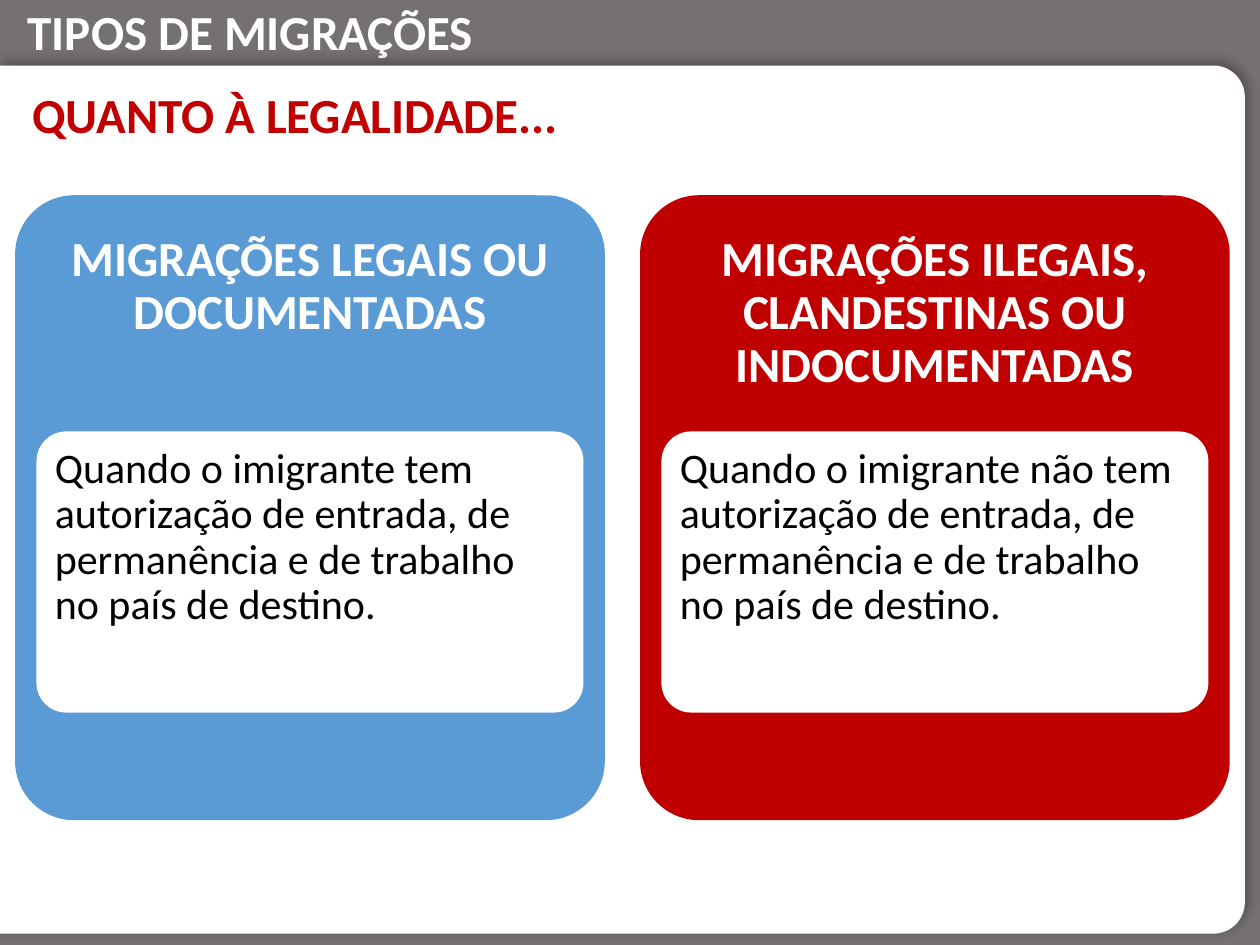
from dataclasses import dataclass
from math import cos, pi, sin

from lxml.etree import SubElement
from pptx import Presentation
from pptx.dml.color import RGBColor
from pptx.enum.shapes import MSO_SHAPE as Shape
from pptx.enum.text import MSO_ANCHOR as Anchor, MSO_AUTO_SIZE as AutoSize, PP_ALIGN as Align
from pptx.oxml.ns import qn
from pptx.util import Inches, Pt

WHITE, GREY, RED, BLUE, BLACK = "FFFFFF", "767171", "C00000", "5B9BD5", "000000"
CARD_TOP, CARD_WIDTH, CARD_HEIGHT = 1.55, 4.68, 4.96
BOX_TOP, BOX_WIDTH, BOX_HEIGHT = 3.44, 4.31, 2.2
BOX_PAD = 0.06


@dataclass
class Card:
    left: float
    color: str
    heading: str
    description: str


CARDS = [
    Card(0.12, BLUE, "MIGRAÇÕES LEGAIS OU DOCUMENTADAS",
         "Quando o imigrante tem autorização de entrada, de permanência e de trabalho "
         "no país de destino."),
    Card(5.08, RED, "MIGRAÇÕES ILEGAIS, CLANDESTINAS OU INDOCUMENTADAS",
         "Quando o imigrante não tem autorização de entrada, de permanência e de trabalho "
         "no país de destino."),
]


def rgb(color: str) -> RGBColor:
    return RGBColor.from_string(color)


def paint(shape, color: str | None, line: str | None = None) -> None:
    shape.shadow.inherit = False
    if color:
        shape.fill.solid()
        shape.fill.fore_color.rgb = rgb(color)
    else:
        shape.fill.background()
    if line:
        shape.line.color.rgb = rgb(line)
        shape.line.width = Pt(2.25)
    else:
        shape.line.fill.background()


def add_block(shapes, kind, left: float, top: float, width: float, height: float,
              color: str | None, line: str | None = None):
    block = shapes.add_shape(kind, Inches(left), Inches(top), Inches(width), Inches(height))
    paint(block, color, line)
    return block


def write(shape, text: str, size: float, color: str, bold: bool = True,
          align=Align.LEFT, anchor=Anchor.TOP, spacing: float = 1.0) -> None:
    frame = shape.text_frame
    frame.text = text
    frame.word_wrap = True
    frame.vertical_anchor = anchor
    paragraph = frame.paragraphs[0]
    paragraph.alignment = align
    paragraph.line_spacing = spacing
    font = paragraph.runs[0].font
    font.name, font.size, font.bold = "Calibri", Pt(size), bold
    font.color.rgb = rgb(color)


def add_label(shapes, left: float, top: float, width: float, height: float,
              insets: tuple[float, float, float, float]):
    label = shapes.add_textbox(Inches(left), Inches(top), Inches(width), Inches(height))
    frame = label.text_frame
    (frame.margin_left, frame.margin_top,
     frame.margin_right, frame.margin_bottom) = map(Inches, insets)
    return label


def add_panel(shapes, top: float, right: float, bottom: float, radius: float):
    quarter = [pi / 2 * step / 16 for step in range(17)]
    center = right - radius
    upper = [(center + radius * sin(a), top + radius - radius * cos(a)) for a in quarter]
    lower = [(center + radius * cos(a), bottom - radius + radius * sin(a)) for a in quarter]
    builder = shapes.build_freeform(0, Inches(top), scale=1.0)
    builder.add_line_segments(
        [(Inches(x), Inches(y)) for x, y in upper + lower + [(0, bottom)]], close=True)
    panel = builder.convert_to_shape()
    paint(panel, WHITE)
    effects = panel.element.spPr.find(qn("a:effectLst"))
    shadow = SubElement(effects, qn("a:outerShdw"), blurRad=str(Pt(7)), dist=str(Pt(3)),
                        dir=str(315 * 60000), algn="bl", rotWithShape="0")
    shade = SubElement(shadow, qn("a:srgbClr"), val=BLACK)
    SubElement(shade, qn("a:alpha"), val="30000")
    return panel


def add_card(shapes, card: Card) -> None:
    body = add_block(shapes, Shape.ROUNDED_RECTANGLE, card.left, CARD_TOP,
                     CARD_WIDTH, CARD_HEIGHT, card.color)
    body.adjustments[0] = 0.1
    heading = add_label(shapes, card.left, CARD_TOP, CARD_WIDTH, 0.3 * CARD_HEIGHT,
                        (0.12, 0.31, 0.12, 0.12))
    write(heading, card.heading, 28, WHITE, align=Align.CENTER, spacing=0.9)

    box_left = card.left + (CARD_WIDTH - BOX_WIDTH) / 2
    box = add_block(shapes, Shape.ROUNDED_RECTANGLE, box_left, BOX_TOP,
                    BOX_WIDTH, BOX_HEIGHT, WHITE, WHITE)
    box.adjustments[0] = 0.1
    description = add_label(shapes, box_left + BOX_PAD, BOX_TOP + BOX_PAD,
                            BOX_WIDTH - 2 * BOX_PAD, BOX_HEIGHT - 2 * BOX_PAD,
                            (0.07, 0.05, 0.07, 0.05))
    write(description, card.description, 24, BLACK, bold=False, spacing=0.9)


def main() -> None:
    deck = Presentation()
    deck.slide_width, deck.slide_height = Inches(10), Inches(7.5)
    slide = deck.slides.add_slide(deck.slide_layouts[5])
    shapes = slide.shapes

    title = shapes.title
    title.left, title.top = Inches(0.12), Inches(-0.04)
    title.width, title.height = Inches(9.37), Inches(0.57)
    write(title, "TIPOS DE MIGRAÇÕES", 28, WHITE)
    title.text_frame.auto_size = AutoSize.SHAPE_TO_FIT_TEXT

    backdrop = add_block(shapes, Shape.RECTANGLE, 0, 0, 10, 7.5, GREY)
    title.element.addprevious(backdrop.element)
    add_panel(shapes, top=0.52, right=9.88, bottom=7.41, radius=0.25)

    subtitle = add_block(shapes, Shape.ROUNDED_RECTANGLE, 0.12, 0.52, 7.87, 0.77, None)
    write(subtitle, "QUANTO À LEGALIDADE...", 28, RED, anchor=Anchor.MIDDLE)

    comparison = shapes.add_group_shape()
    for card in CARDS:
        add_card(comparison.shapes, card)

    deck.save("out.pptx")


if __name__ == "__main__":
    main()
